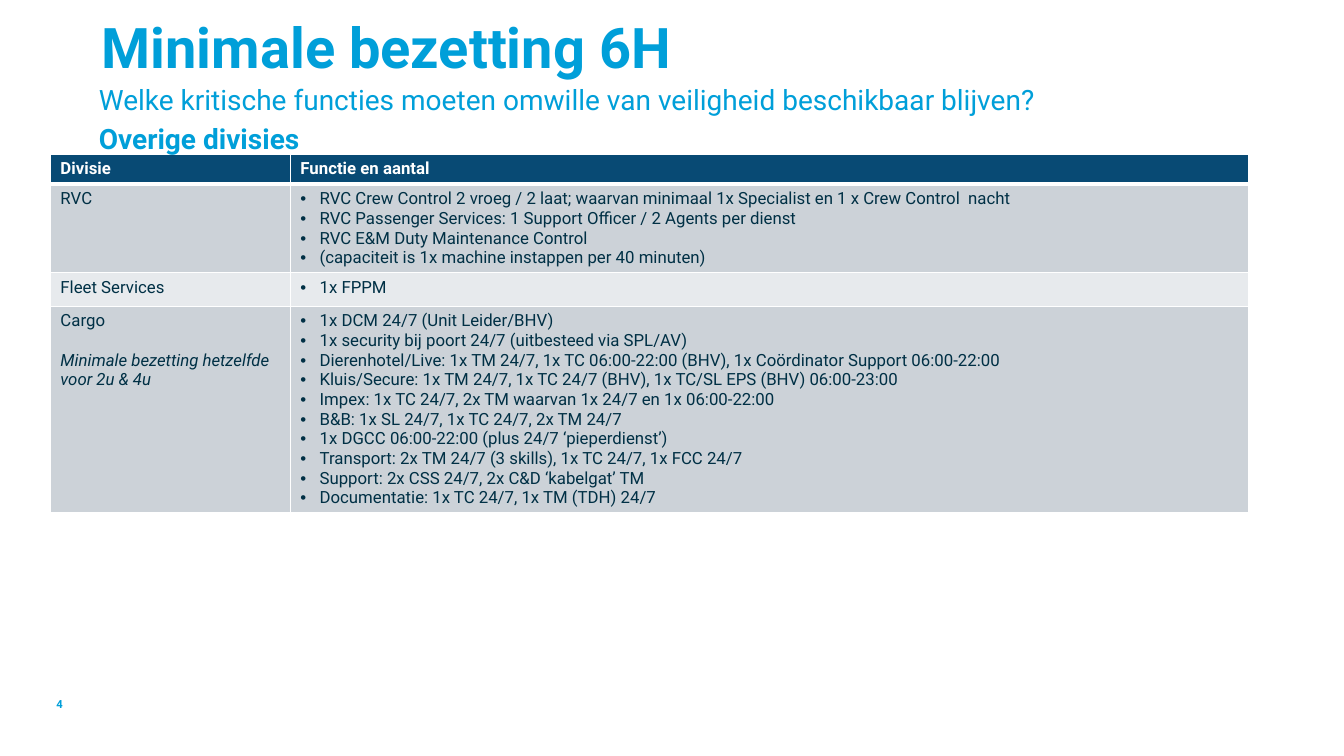
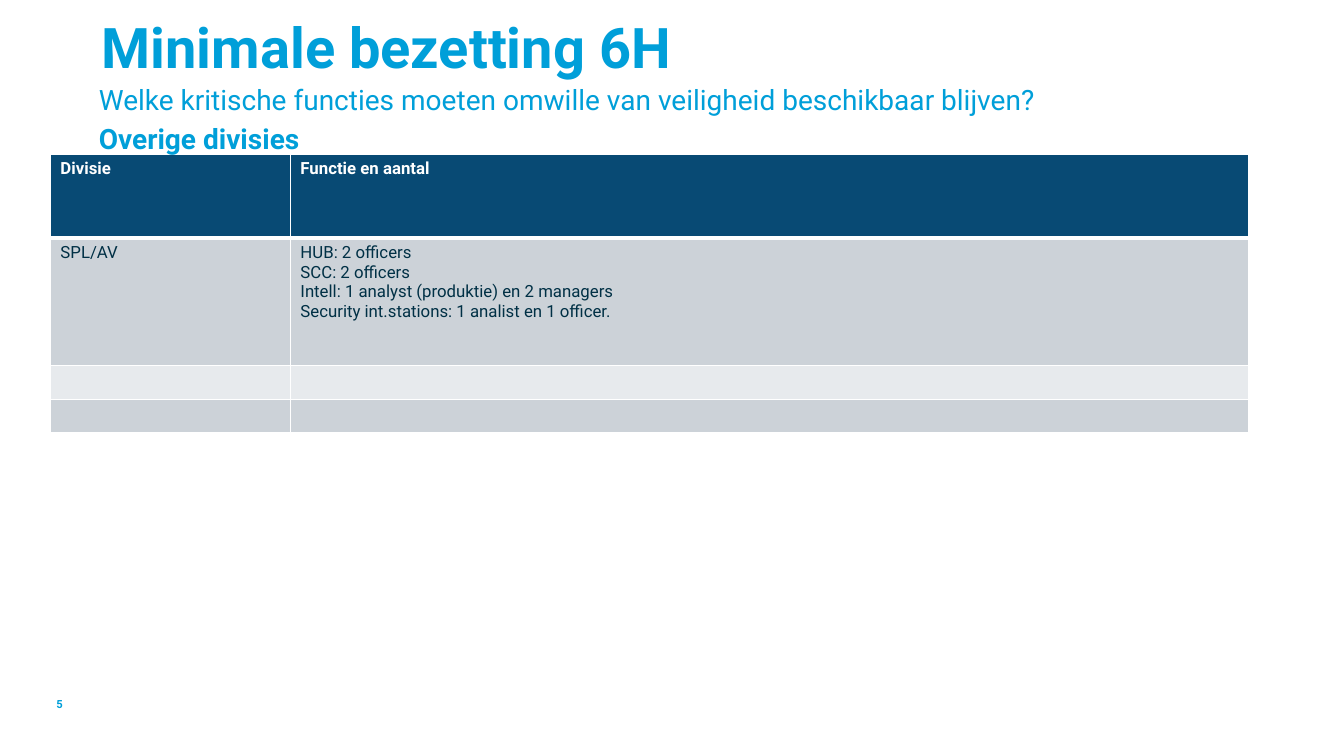
from dataclasses import dataclass

from lxml.etree import SubElement
from pptx import Presentation
from pptx.dml.color import RGBColor
from pptx.enum.text import MSO_ANCHOR as Anchor, MSO_AUTO_SIZE as AutoSize, PP_ALIGN as Align
from pptx.oxml.ns import qn
from pptx.util import Inches, Pt


@dataclass(frozen=True)
class Theme:
    font: str = "Roboto"
    accent: str = "009FD9"
    header: str = "084A74"
    ink: str = "003045"
    white: str = "FFFFFF"
    bands: tuple = ("CCD2D8", "E7EAED")
    title_size: int = 40
    subtitle_size: int = 20
    table_size: int = 12
    number_size: int = 8
    thin: int = 1
    thick: int = 3


@dataclass(frozen=True)
class Line:
    """One paragraph of a table cell."""
    text: str
    bullet: bool = False
    italic: bool = False
    space_before: int = 0


def bullets(*texts):
    return [Line(text, bullet=True) for text in texts]


class Deck:
    def __init__(self, theme):
        self.theme = theme
        self.prs = Presentation()
        self.prs.slide_width, self.prs.slide_height = Inches(13.33), Inches(7.5)
        self.slide = None

    def new_slide(self):
        self.slide = self.prs.slides.add_slide(self.prs.slide_layouts[1])

    def frame(self, shape, left, top, width, height, anchor=Anchor.TOP):
        """Place a shape and return its text frame without insets."""
        shape.left, shape.top = Inches(left), Inches(top)
        shape.width, shape.height = Inches(width), Inches(height)
        text_frame = shape.text_frame
        settings = dict(margin_left=0, margin_top=0, margin_right=0, margin_bottom=0,
                        word_wrap=True, auto_size=AutoSize.NONE, vertical_anchor=anchor)
        for name, value in settings.items():
            setattr(text_frame, name, value)
        return text_frame

    def add_text(self, paragraph, text, size, color, bold=False, italic=False, **spacing):
        layout = dict(alignment=Align.LEFT, space_before=Pt(0), space_after=Pt(0)) | spacing
        for name, value in layout.items():
            setattr(paragraph, name, value)
        run = paragraph.add_run()
        run.text = text
        style = dict(name=self.theme.font, size=Pt(size), bold=bold, italic=italic)
        for name, value in style.items():
            setattr(run.font, name, value)
        run.font.color.rgb = RGBColor.from_string(color)

    def mark(self, paragraph, bullet, indent=0.19):
        """Set the bullet and the hanging indent, or switch both off."""
        props = paragraph._p.get_or_add_pPr()
        hang = Inches(indent) if bullet else 0
        props.set("marL", str(hang))
        props.set("indent", str(-hang))
        if bullet:
            SubElement(props, qn("a:buFont"), typeface="Arial")
            SubElement(props, qn("a:buChar"), char="•")
        else:
            SubElement(props, qn("a:buNone"))

    def title(self, text):
        text_frame = self.frame(self.slide.shapes.title, 1.01, 0.2, 11.64, 0.54)
        self.add_text(text_frame.paragraphs[0], text, self.theme.title_size,
                      self.theme.accent, bold=True, line_spacing=0.9)

    def subtitle(self, question, scope):
        body = self.slide.placeholders[1]
        text_frame = self.frame(body, 0.98, 0.86, 11.64, 0.4)
        paragraphs = text_frame.paragraphs[0], text_frame.add_paragraph()
        for paragraph, text, bold in zip(paragraphs, (question, scope), (False, True)):
            self.mark(paragraph, bullet=False)
            self.add_text(paragraph, text, self.theme.subtitle_size, self.theme.accent,
                          bold=bold, line_spacing=0.9, space_after=Pt(6))

    def page_number(self, number):
        box = self.slide.shapes.add_textbox(0, 0, 0, 0)
        text_frame = self.frame(box, 0.56, 6.9, 0.45, 0.16, Anchor.MIDDLE)
        self.add_text(text_frame.paragraphs[0], str(number), self.theme.number_size,
                      self.theme.accent, bold=True)

    def borders(self, cell, top, bottom):
        props = cell._tc.get_or_add_tcPr()
        thin = self.theme.thin
        for side, width in zip("LRTB", (thin, thin, top, bottom)):
            line = SubElement(props, qn(f"a:ln{side}"), w=str(Pt(width)))
            fill = SubElement(line, qn("a:solidFill"))
            SubElement(fill, qn("a:srgbClr"), val=self.theme.white)

    def cell(self, cell, lines, row):
        theme = self.theme
        is_header = row == 0
        self.borders(cell, top=theme.thick if row == 1 else theme.thin,
                     bottom=theme.thick if is_header else theme.thin)
        fill = theme.header if is_header else theme.bands[(row - 1) % 2]
        cell.fill.solid()
        cell.fill.fore_color.rgb = RGBColor.from_string(fill)
        text_frame = cell.text_frame
        if not lines:
            SubElement(text_frame.paragraphs[0]._p, qn("a:endParaRPr"),
                       sz=str(theme.table_size * 100))
        for i, line in enumerate(lines):
            paragraph = text_frame.add_paragraph() if i else text_frame.paragraphs[0]
            self.mark(paragraph, line.bullet)
            self.add_text(paragraph, line.text, theme.table_size,
                          theme.white if is_header else theme.ink, bold=is_header,
                          italic=line.italic, space_before=Pt(line.space_before))

    def staffing_table(self, rows, heights, widths=(2.38, 9.5)):
        graphic = self.slide.shapes.add_table(
            len(rows), len(widths), Inches(0.5), Inches(1.53),
            Inches(sum(widths)), Inches(sum(heights)))
        table = graphic.table
        for column, width in zip(table.columns, widths):
            column.width = Inches(width)
        for r, (row, height) in enumerate(zip(rows, heights)):
            table.rows[r].height = Inches(height)
            for c, lines in enumerate(row):
                self.cell(table.cell(r, c), lines, r)
        # The subtitle's descenders reach over the table's top edge.
        graphic.element.addnext(self.slide.placeholders[1].element)


HEADER = ([Line("Divisie")], [Line("Functie en aantal")])

OPERATIONS = [
    HEADER,
    ([Line("RVC")], bullets(
        "RVC Crew Control 2 vroeg / 2 laat; waarvan minimaal 1x Specialist en 1 x Crew Control  nacht",
        "RVC Passenger Services: 1 Support Officer / 2 Agents per dienst",
        "RVC E&M Duty Maintenance Control",
        "(capaciteit is 1x machine instappen per 40 minuten)")),
    ([Line("Fleet Services")], bullets("1x FPPM")),
    ([Line("Cargo"),
      Line("Minimale bezetting hetzelfde voor 2u & 4u", italic=True, space_before=14)], bullets(
        "1x DCM 24/7 (Unit Leider/BHV)",
        "1x security bij poort 24/7 (uitbesteed via SPL/AV)",
        "Dierenhotel/Live: 1x TM 24/7, 1x TC 06:00-22:00 (BHV), 1x Coördinator Support 06:00-22:00",
        "Kluis/Secure: 1x TM 24/7, 1x TC 24/7 (BHV), 1x TC/SL EPS (BHV) 06:00-23:00",
        "Impex: 1x TC 24/7, 2x TM waarvan 1x 24/7 en 1x 06:00-22:00",
        "B&B: 1x SL 24/7, 1x TC 24/7, 2x TM 24/7",
        "1x DGCC 06:00-22:00 (plus 24/7 ‘pieperdienst’)",
        "Transport: 2x TM 24/7 (3 skills), 1x TC 24/7, 1x FCC 24/7",
        "Support: 2x CSS 24/7, 2x C&D ‘kabelgat’ TM",
        "Documentatie: 1x TC 24/7, 1x TM (TDH) 24/7")),
]

SECURITY = [
    HEADER,
    ([Line("SPL/AV")], [
        Line("HUB: 2 officers"),
        Line("SCC: 2 officers"),
        Line("Intell: 1 analyst (produktie) en 2 managers"),
        Line("Security int.stations: 1 analist en 1 officer.")]),
    ([], []),
    ([], []),
]


def main():
    deck = Deck(Theme())
    pages = ((4, OPERATIONS, (0.29, 0.87, 0.33, 2.05)),
             (5, SECURITY, (0.83, 1.27, 0.33, 0.33)))
    for number, rows, heights in pages:
        deck.new_slide()
        deck.title("Minimale bezetting 6H")
        deck.subtitle("Welke kritische functies moeten omwille van veiligheid beschikbaar blijven?",
                      "Overige divisies")
        deck.staffing_table(rows, heights)
        deck.page_number(number)
    deck.prs.save("out.pptx")


if __name__ == "__main__":
    main()
